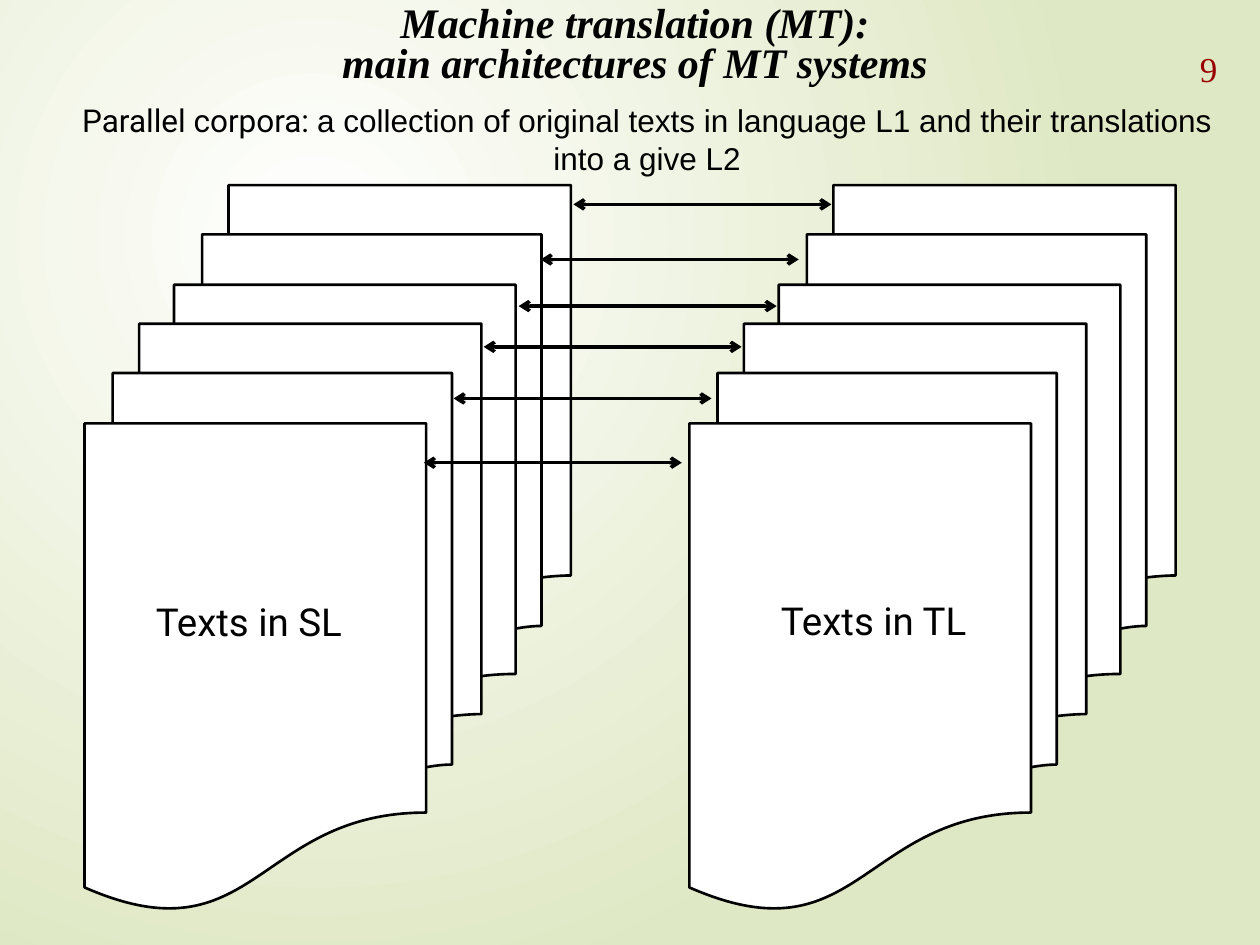
"""Build the slide on parallel corpora with two linked stacks of texts."""
from typing import Any, NamedTuple

import pptx
import pptx.dml.color
import pptx.enum.dml
import pptx.enum.shapes
import pptx.enum.text
import pptx.oxml.ns
import pptx.slide
import pptx.util
from lxml import etree

Pt = pptx.util.Pt
Slide = pptx.slide.Slide
PP_ALIGN = pptx.enum.text.PP_ALIGN
MSO_ANCHOR = pptx.enum.text.MSO_ANCHOR
qn = pptx.oxml.ns.qn

BLACK = pptx.dml.color.RGBColor(0x00, 0x00, 0x00)
WHITE = pptx.dml.color.RGBColor(0xFF, 0xFF, 0xFF)
RED = pptx.dml.color.RGBColor(0x99, 0x00, 0x00)
GREEN = pptx.dml.color.RGBColor(0xDF, 0xE8, 0xC4)

PILE_TOP = 105.8
PILE_WIDTH, PILE_HEIGHT = 226.8, 334.8
FRONT_SHIFT = (-51.1, 79.2)
LINK_LENGTH = 147.4


class Box(NamedTuple):
    left: float
    top: float
    width: float
    height: float


class Part(NamedTuple):
    text: str
    font: dict[str, Any]


class Stack(NamedTuple):
    left: float
    label: str
    label_box: Box


class Link(NamedTuple):
    left: float
    top: float


STACKS = [
    Stack(99.4, "Texts in SL", Box(82, 338.4, 124.6, 33.8)),
    Stack(445, "Texts in TL", Box(439.2, 337.8, 136, 33.8)),
]
LINKS = [
    Link(327.7, 116.8), Link(309, 148.3), Link(296.4, 174.9),
    Link(276.4, 198.2), Link(259.2, 227.7), Link(242.2, 264.4),
]


def style(size: float, name: str, **extra: Any) -> dict[str, Any]:
    """Return the font values of a text part."""
    return {"size": Pt(size), "name": name, **extra}


def paint_background(slide: Slide) -> None:
    """Fill the background with a circular white to green gradient."""
    fill = slide.background.fill
    fill.gradient()
    for stop, color, position in zip(fill.gradient_stops, (WHITE, GREEN), (0, 1)):
        stop.color.rgb = color
        stop.position = position
    gradient = slide.element.find(f".//{qn('a:gradFill')}")
    linear = gradient.find(qn("a:lin"))
    circle = etree.Element(qn("a:path"), {"path": "circle"})
    bounds = {"l": "50000", "t": "50000", "r": "100000", "b": "100000"}
    etree.SubElement(circle, qn("a:fillToRect"), bounds)
    gradient.replace(linear, circle)


def add_text(slide: Slide, box: Box, parts: list[Part], color=BLACK,
             frame_format: dict[str, Any] | None = None,
             **paragraph_format: Any) -> None:
    """Write one paragraph of styled parts in a text box."""
    frame = slide.shapes.add_textbox(*map(Pt, box)).text_frame
    for key, value in {"word_wrap": True, **(frame_format or {})}.items():
        setattr(frame, key, value)
    paragraph = frame.paragraphs[0]
    for key, value in paragraph_format.items():
        setattr(paragraph, key, value)
    for part in parts:
        for row, line in enumerate(part.text.split("\n")):
            if row:
                paragraph.add_line_break()
            run = paragraph.add_run()
            run.text = line
            for key, value in part.font.items():
                setattr(run.font, key, value)
            run.font.color.rgb = color


def add_pile(slide: Slide, left: float, top: float) -> None:
    """Draw one pile of three documents."""
    pile = slide.shapes.add_shape(
        pptx.enum.shapes.MSO_SHAPE.FLOWCHART_MULTIDOCUMENT,
        *map(Pt, (left, top, PILE_WIDTH, PILE_HEIGHT)))
    pile.shadow.inherit = False
    pile.fill.solid()
    pile.fill.fore_color.rgb = WHITE
    pile.line.color.rgb = BLACK
    pile.line.width = Pt(1.5)


def add_stack(slide: Slide, stack: Stack) -> None:
    """Draw a back pile, a front pile and their label."""
    for step in range(2):
        add_pile(slide, stack.left + step * FRONT_SHIFT[0],
                 PILE_TOP + step * FRONT_SHIFT[1])
    add_text(slide, stack.label_box, [Part(stack.label, style(22, "Roboto"))])


def add_link(slide: Slide, link: Link) -> None:
    """Draw a two-headed arrow between matching documents."""
    arrow = slide.shapes.add_connector(
        pptx.enum.shapes.MSO_CONNECTOR.STRAIGHT,
        *map(Pt, (link.left, link.top, link.left + LINK_LENGTH, link.top)))
    arrow.line.color.rgb = BLACK
    arrow.line.width = Pt(2)
    outline = arrow.line._get_or_add_ln()
    for end in ("a:headEnd", "a:tailEnd"):
        etree.SubElement(outline, qn(end), {"type": "arrow"})
    etree.SubElement(arrow.element.spPr, qn("a:effectLst"))


def main() -> None:
    """Build and save the presentation."""
    presentation = pptx.Presentation()
    presentation.slide_width, presentation.slide_height = Pt(720), Pt(540)
    slide = presentation.slides.add_slide(presentation.slide_layouts[6])
    paint_background(slide)
    margins = ("margin_left", "margin_top", "margin_right", "margin_bottom")
    number_format = {"vertical_anchor": MSO_ANCHOR.MIDDLE, **dict.fromkeys(margins, 0)}
    add_text(slide, Box(632.2, 20.2, 63.4, 37.4),
             [Part("9", style(20, "Times New Roman"))],
             RED, number_format, alignment=PP_ALIGN.RIGHT)
    for stack in STACKS:
        add_stack(slide, stack)
    add_text(slide, Box(36.7, 54, 666, 51.1), [
        Part("Parallel corpora: ", style(18, "Roboto")),
        Part("a collection of original texts in language L1 and their "
             "translations into a give L2", style(18, "Arial")),
    ], alignment=PP_ALIGN.CENTER)
    for link in LINKS:
        add_link(slide, link)
    add_text(slide, Box(96.5, 0, 532.8, 53.3), [
        Part("Machine translation (MT):\nmain architectures of MT systems",
             style(24, "Times New Roman", bold=True, italic=True)),
    ], alignment=PP_ALIGN.CENTER, line_spacing=0.8)
    presentation.save("out.pptx")


if __name__ == "__main__":
    main()
